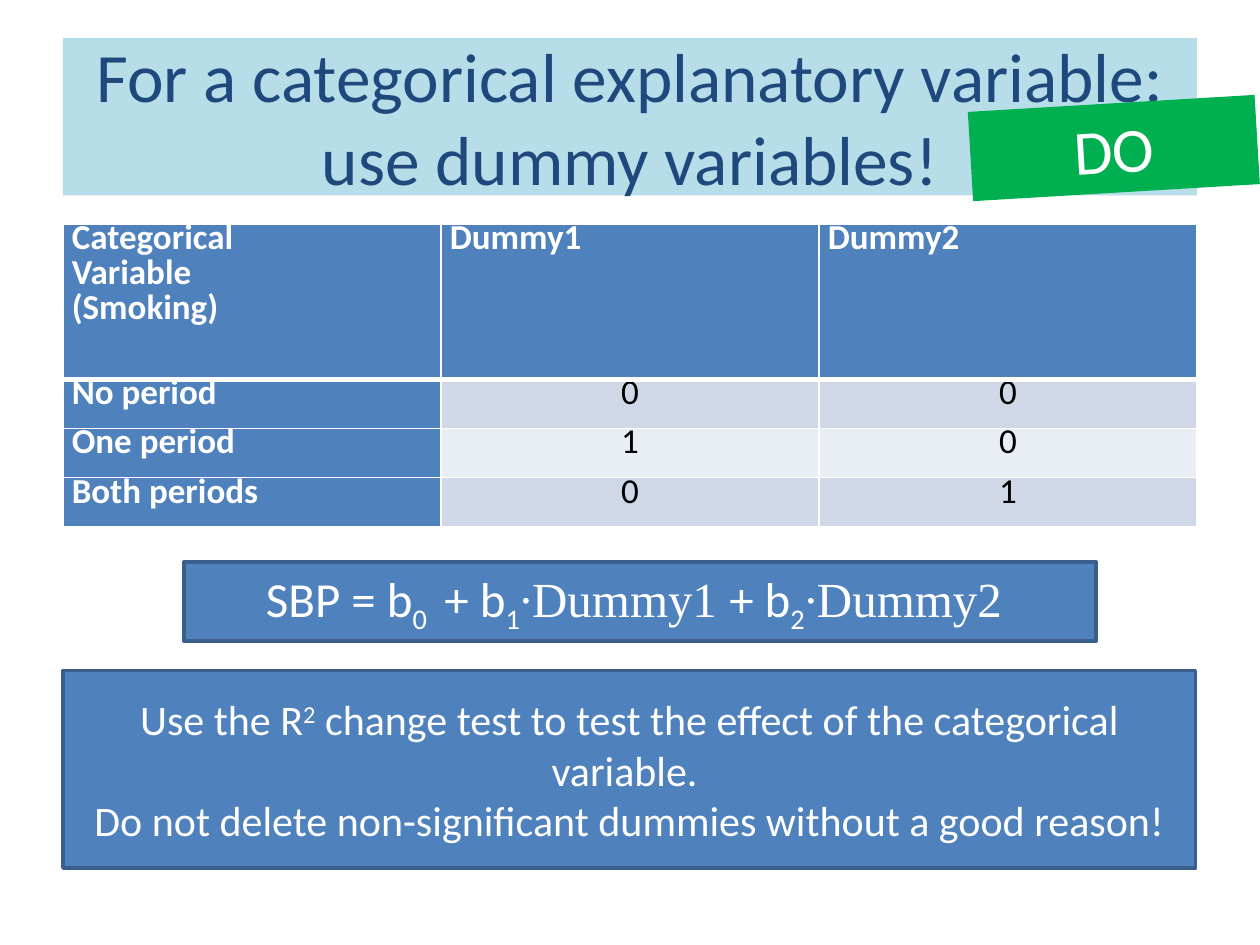
from dataclasses import dataclass
from typing import Optional

from lxml.etree import SubElement
from pptx import Presentation
from pptx.dml.color import RGBColor
from pptx.enum.shapes import MSO_SHAPE as Preset
from pptx.enum.text import MSO_ANCHOR as Anchor, PP_ALIGN as Align
from pptx.oxml.ns import qn
from pptx.util import Inches, Pt

COLORS = {
    "pale": "B7DEE8", "navy": "1F497D", "green": "00B050", "blue": "4F81BD",
    "edge": "3A5F8C", "white": "FFFFFF", "black": "000000",
    "band": "D0D8E8", "light_band": "E9EDF4",
}
SANS, SERIF = "Calibri", "Times New Roman"
SUB, SUPER = -25, 30
GRID_COLUMNS, GRID_ROWS = 20, 15
WIDTH, HEIGHT = Inches(10), Inches(7.5)
HEADER_ROW, BODY_ROW = 2.46, 0.78


@dataclass(frozen=True)
class Place:
    """Position and size in grid columns and rows."""
    column: float
    row: float
    columns: float
    rows: float

    def emu(self) -> tuple[int, int, int, int]:
        return (across(self.column), down(self.row),
                across(self.columns), down(self.rows))


@dataclass(frozen=True)
class Span:
    text: str
    font: str = SANS
    baseline: int = 0


@dataclass(frozen=True)
class Panel:
    place: Place
    fill: str
    size: float
    paras: list[list[Span]]
    color: str = "white"
    edge: Optional[str] = None
    rotation: float = 0


def across(columns: float) -> int:
    return round(WIDTH * columns / GRID_COLUMNS)


def down(rows: float) -> int:
    return round(HEIGHT * rows / GRID_ROWS)


def rgb(name: str) -> RGBColor:
    return RGBColor.from_string(COLORS[name])


def paint(fill, name: str) -> None:
    fill.solid()
    fill.fore_color.rgb = rgb(name)


def add_span(para, span: Span, size: float, color: str, bold: bool = False) -> None:
    run = para.add_run()
    run.text = span.text
    for key, value in {"name": span.font, "size": Pt(size), "bold": bold}.items():
        setattr(run.font, key, value)
    run.font.color.rgb = rgb(color)
    if span.baseline:
        run.font._element.set("baseline", str(span.baseline * 1000))


def next_para(frame, index: int):
    return frame.add_paragraph() if index else frame.paragraphs[0]


def add_panel(page, panel: Panel) -> None:
    box = page.shapes.add_shape(Preset.RECTANGLE, *panel.place.emu())
    box.shadow.inherit = False
    box.rotation = panel.rotation
    paint(box.fill, panel.fill)
    if panel.edge:
        paint(box.line.fill, panel.edge)
        box.line.width = Pt(2)
    else:
        box.line.fill.background()
    frame = box.text_frame
    frame.word_wrap = True
    frame.vertical_anchor = Anchor.MIDDLE
    for index, spans in enumerate(panel.paras):
        para = next_para(frame, index)
        para.alignment = Align.CENTER
        for span in spans:
            add_span(para, span, panel.size, panel.color)


def add_border(cell, side: str, points: float) -> None:
    line = SubElement(cell._tc.get_or_add_tcPr(), qn(f"a:ln{side}"), w=str(Pt(points)))
    SubElement(SubElement(line, qn("a:solidFill")), qn("a:srgbClr"), val=COLORS["white"])


def fill_cell(cell, text: str, row: int, column: int) -> None:
    heading = row == 0 or column == 0
    thick = {(0, "B"), (1, "T")}
    for side in "LRTB":
        add_border(cell, side, 3 if (row, side) in thick else 1)
    paint(cell.fill, "blue" if heading else "band" if row % 2 else "light_band")
    margins = {"margin_left": 0.07, "margin_right": 0.07,
               "margin_top": 0, "margin_bottom": 0}
    for key, value in margins.items():
        setattr(cell, key, Inches(value))
    for index, line in enumerate(text.split("\n")):
        para = next_para(cell.text_frame, index)
        para.line_spacing = Pt(20)
        para.alignment = Align.LEFT if heading else Align.CENTER
        add_span(para, Span(line), 20, "white" if heading else "black", heading)


def add_dummy_table(page, place: Place, rows: list[list[str]]) -> None:
    table = page.shapes.add_table(len(rows), len(rows[0]), *place.emu()).table
    for column in table.columns:
        column.width = across(place.columns / len(rows[0]))
    for row, texts in enumerate(rows):
        table.rows[row].height = down(BODY_ROW if row else HEADER_ROW)
        for column, text in enumerate(texts):
            fill_cell(table.cell(row, column), text, row, column)


TITLE = Panel(
    Place(1, 0.6, 18, 2.5), "pale", 39.6,
    [[Span("For a categorical explanatory variable: use dummy variables!")]], "navy")
DO_TAG = Panel(Place(15.4, 1.64, 4.56, 1.42), "green", 36, [[Span("DO")]],
               rotation=356.6)
ADVICE = Panel(
    Place(1, 10.64, 17.98, 3.14), "blue", 24,
    [[Span("Use the R"), Span("2", baseline=SUPER),
      Span(" change test to test the effect of the categorical variable. ")],
     [Span("Do not delete non-significant dummies without a good reason!")]],
    edge="edge")
EQUATION = Panel(
    Place(2.92, 8.92, 14.48, 1.26), "blue", 28,
    [[Span("SBP = b"), Span("0 ", baseline=SUB),
      Span(" + b"), Span("1", baseline=SUB), Span("∙Dummy1 ", SERIF),
      Span("+ b"), Span("2", baseline=SUB), Span("∙Dummy2 ", SERIF)]],
    edge="edge")
DUMMY_CODES = [
    ["Categorical\nVariable\n(Smoking)", "Dummy1", "Dummy2"],
    ["No period", "0", "0"],
    ["One period", "1", "0"],
    ["Both periods", "0", "1"],
]


def main() -> None:
    deck = Presentation()
    deck.slide_width, deck.slide_height = WIDTH, HEIGHT
    page = deck.slides.add_slide(deck.slide_layouts[6])
    for panel in (TITLE, DO_TAG):
        add_panel(page, panel)
    add_dummy_table(page, Place(1, 3.56, 18, HEADER_ROW + 3 * BODY_ROW), DUMMY_CODES)
    for panel in (ADVICE, EQUATION):
        add_panel(page, panel)
    deck.save("out.pptx")


if __name__ == "__main__":
    main()
